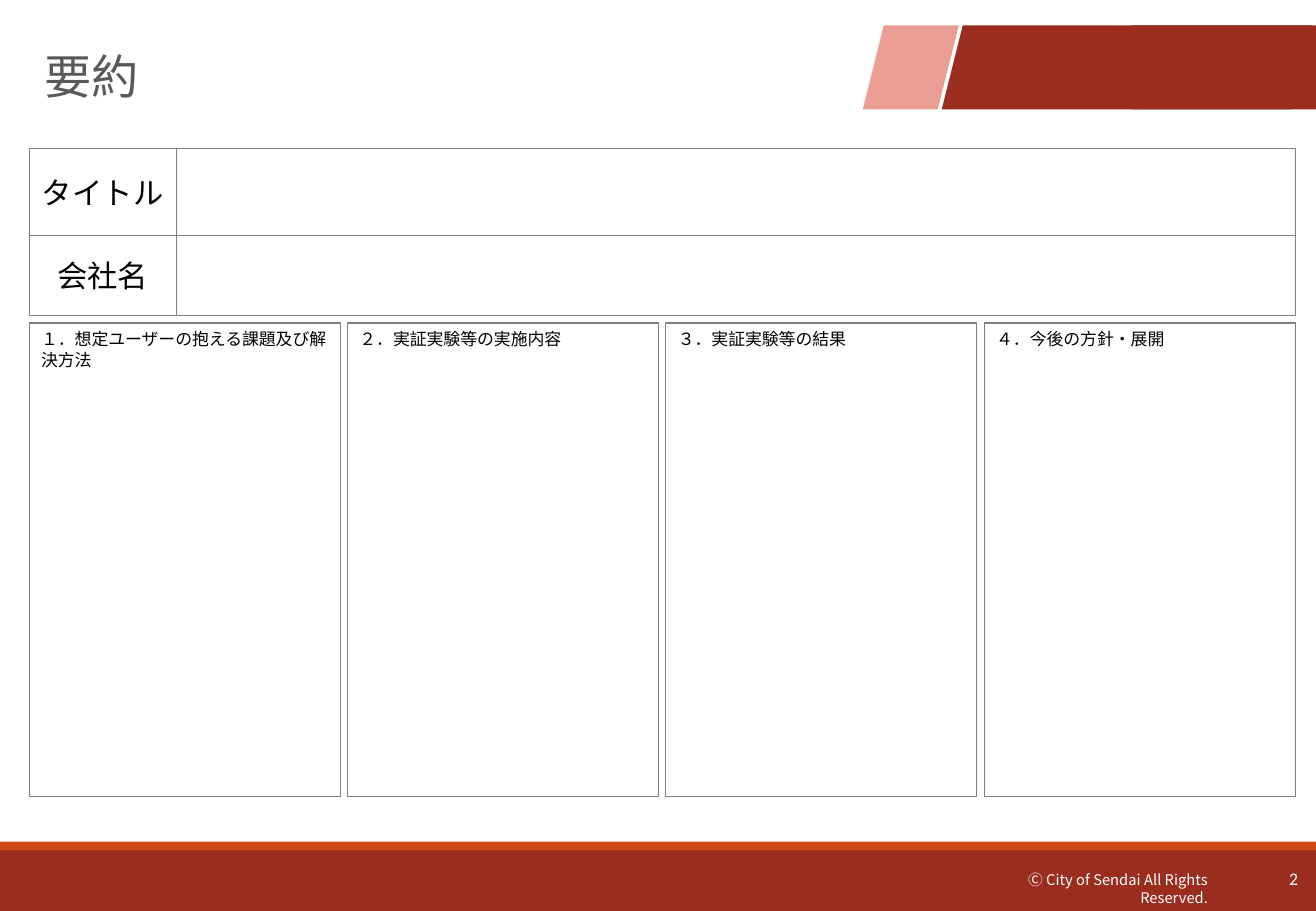
import lxml.etree
import pptx
import pptx.dml.color
import pptx.enum.shapes
import pptx.enum.text
import pptx.oxml.ns
import pptx.util

SHAPES = pptx.enum.shapes.MSO_SHAPE
ALIGN = pptx.enum.text.PP_ALIGN
ANCHOR = pptx.enum.text.MSO_ANCHOR

THEME = {
    "brick": "9B2D1F", "orange": "D34817", "pink": "E99D93",
    "paper": "FFFFFF", "ink": "000000", "grey": "595959", "rule": "808080",
    "latin": "Calibri", "japanese": "Noto Sans CJK JP",
    "title": 28, "label": 18, "number": 10.5, "heading": 10, "credit": 8.7,
}

WIDTH, HEIGHT = 10.83, 7.5
LEFT, RIGHT = 0.24, 10.66
GAP = 0.06
LABEL_WIDTH = 1.21
FOOTER_TOP, STRIPE = 7, 0.07
BANNER_TOP, BANNER_HEIGHT = 0.21, 0.69

presentation = pptx.Presentation()
presentation.slide_width = pptx.util.Inches(WIDTH)
presentation.slide_height = pptx.util.Inches(HEIGHT)
slide = presentation.slides.add_slide(presentation.slide_layouts[6])


def add_block(place, fill=None, line=None, preset=SHAPES.RECTANGLE):
    """Add a shape at (left, top, width, height) in inches; no fill gives a text box."""
    box = [pptx.util.Inches(length) for length in place]
    if fill is None:
        return slide.shapes.add_textbox(*box)
    block = slide.shapes.add_shape(preset, *box)
    block.shadow.inherit = False
    block.fill.solid()
    block.fill.fore_color.rgb = pptx.dml.color.RGBColor.from_string(THEME[fill])
    if line:
        block.line.color.rgb = pptx.dml.color.RGBColor.from_string(THEME[line])
        block.line.width = pptx.util.Pt(0.75)
    else:
        block.line.fill.background()
    return block


def write(block, text, size, color="ink", font="japanese", align=ALIGN.LEFT,
          anchor=ANCHOR.TOP, line_spacing=None, tracking=None):
    frame = block.text_frame
    frame.word_wrap = True
    frame.vertical_anchor = anchor
    paragraph = frame.paragraphs[0]
    paragraph.alignment = align
    paragraph.line_spacing = line_spacing
    run = paragraph.add_run()
    run.text = text
    run.font.size = pptx.util.Pt(THEME[size])
    run.font.name = THEME[font]
    run.font.color.rgb = pptx.dml.color.RGBColor.from_string(THEME[color])
    properties = run.font._element
    east_asian = lxml.etree.SubElement(properties, pptx.oxml.ns.qn("a:ea"))
    east_asian.set("typeface", THEME["japanese"])
    if tracking is not None:
        properties.set("spc", str(round(tracking * 100)))


# Footer and banner
add_block((0, FOOTER_TOP, WIDTH, HEIGHT - FOOTER_TOP), "brick")
add_block((0, FOOTER_TOP - STRIPE, WIDTH, STRIPE), "orange")
for left, width, fill, preset in (
    (7.75, 3.05, "brick", SHAPES.PARALLELOGRAM),
    (7.1, 0.79, "pink", SHAPES.PARALLELOGRAM),
    (9.31, WIDTH - 9.31, "brick", SHAPES.RECTANGLE),
):
    add_block((left, BANNER_TOP, width, BANNER_HEIGHT), fill, preset=preset)

credit = add_block((7.86, 7.12, 2.18, 0.25))
write(credit, "Ⓒ City of Sendai All Rights Reserved.", "credit",
      color="paper", align=ALIGN.RIGHT)
page_number = add_block((9.61, 7.03, 1.17, 0.4))
write(page_number, "2", "number", color="paper", font="latin",
      align=ALIGN.RIGHT, anchor=ANCHOR.MIDDLE)

title = add_block((0.27, 0.2, RIGHT - LEFT, 0.71))
write(title, "要約", "title", color="grey", font="latin",
      anchor=ANCHOR.BOTTOM, line_spacing=0.85, tracking=-0.5)

# Entry rows: a label and an empty field
row_top = 1.22
for label, row_height in (("タイトル", 0.72), ("会社名", 0.66)):
    label_cell = add_block((LEFT, row_top, LABEL_WIDTH, row_height), "paper", "rule")
    write(label_cell, label, "label", align=ALIGN.CENTER, anchor=ANCHOR.MIDDLE)
    field_left = LEFT + LABEL_WIDTH
    add_block((field_left, row_top, RIGHT - field_left, row_height), "paper", "rule")
    row_top += row_height

# Four equal summary panels
headings = (
    "１．想定ユーザーの抱える課題及び解決方法",
    "２．実証実験等の実施内容",
    "３．実証実験等の結果",
    "４．今後の方針・展開",
)
panel_width = (RIGHT - LEFT - GAP * (len(headings) - 1)) / len(headings)
for column, heading in enumerate(headings):
    panel_left = LEFT + column * (panel_width + GAP)
    panel = add_block((panel_left, row_top + GAP, panel_width, 3.9), "paper", "rule")
    write(panel, heading, "heading")

presentation.save("out.pptx")
